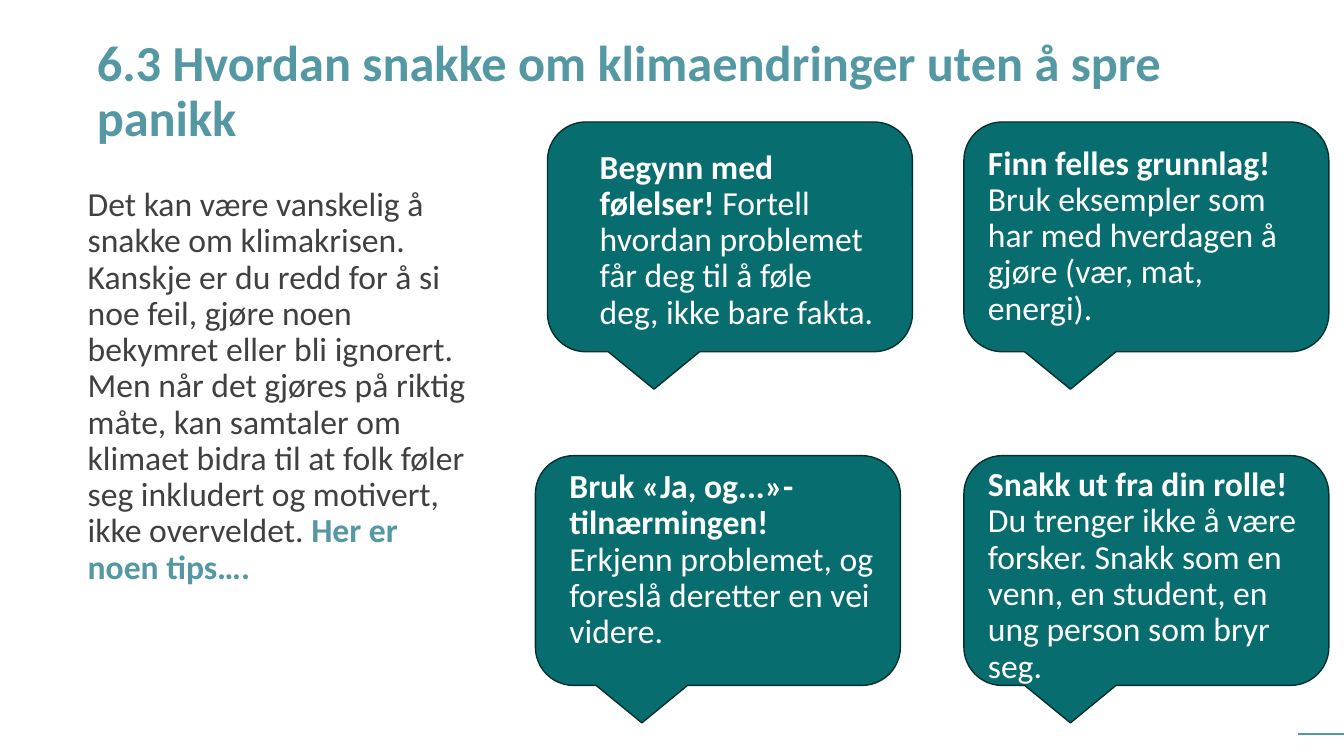
from dataclasses import dataclass

import pptx
import pptx.dml.color
import pptx.enum.shapes
import pptx.enum.text
import pptx.oxml
import pptx.oxml.ns
import pptx.util
from pptx.util import Inches


@dataclass(frozen=True)
class Theme:
    font: str = "Calibri"
    title_size: int = 36
    text_size: int = 24
    line_width: int = 1
    accent: str = "5398A2"
    body: str = "404040"
    bubble: str = "086D6E"
    bubble_line: str = "043030"
    bubble_text: str = "FFFFFF"


THEME = Theme()

TITLE = "6.3 Hvordan snakke om klimaendringer uten å spre panikk"
INTRO = (
    "Det kan være vanskelig å snakke om klimakrisen. Kanskje er du redd for å si "
    "noe feil, gjøre noen bekymret eller bli ignorert. Men når det gjøres på riktig "
    "måte, kan samtaler om klimaet bidra til at folk føler seg inkludert og motivert, "
    "ikke overveldet. "
)
INTRO_END = "Her er noen tips…."

BUBBLE_WIDTH, BUBBLE_HEIGHT = 3.62, 2.28
BUBBLE_ADJUSTMENTS = (-0.208, 0.663, 0.167)
TOP_ROW, BOTTOM_ROW = 1.21, 4.52
RIGHT_COLUMN = 9.56
TIP_HEIGHT = 2.68

TIPS = [
    ((5.43, TOP_ROW), (5.85, 1.44, 2.94), "Begynn med følelser! ",
     "Fortell hvordan problemet får deg til å føle deg, ikke bare fakta."),
    ((RIGHT_COLUMN, TOP_ROW), (9.7, 1.4, 3.28), "Finn felles grunnlag! ",
     "Bruk eksempler som har med hverdagen å gjøre (vær, mat, energi)."),
    ((5.31, BOTTOM_ROW), (5.55, 4.61, 3.24), "Bruk «Ja, og...»-tilnærmingen! ",
     "Erkjenn problemet, og foreslå deretter en vei videre."),
    ((RIGHT_COLUMN, BOTTOM_ROW), (9.7, 4.59, 3.5), "Snakk ut fra din rolle! ",
     "Du trenger ikke å være forsker. Snakk som en venn, en student, en ung person "
     "som bryr seg."),
]


def color(value):
    return pptx.dml.color.RGBColor.from_string(value)


def place(shape, left, top, width, height):
    shape.left, shape.top = Inches(left), Inches(top)
    shape.width, shape.height = Inches(width), Inches(height)


def write(shape, size, spans):
    frame = shape.text_frame
    frame.word_wrap = True
    frame.auto_size = pptx.enum.text.MSO_AUTO_SIZE.NONE
    frame.vertical_anchor = pptx.enum.text.MSO_ANCHOR.TOP
    para = frame.paragraphs[0]
    para.alignment = pptx.enum.text.PP_ALIGN.LEFT
    para.line_spacing = 0.9
    para.space_before = pptx.util.Pt(0)
    for text, tint, bold in spans:
        span = para.add_run()
        span.text = text
        span.font.name = THEME.font
        span.font.size = pptx.util.Pt(size)
        span.font.bold = bold
        span.font.color.rgb = color(tint)
    return para


def remove_bullet(para):
    properties = para._p.get_or_add_pPr()
    properties.set("marL", "0")
    properties.set("indent", "0")
    properties.append(pptx.oxml.parse_xml(
        f"<a:buNone {pptx.oxml.ns.nsdecls('a')}/>"))


def add_bubble(page, left, top):
    bubble = page.shapes.add_shape(
        pptx.enum.shapes.MSO_SHAPE.ROUNDED_RECTANGULAR_CALLOUT,
        Inches(left), Inches(top), Inches(BUBBLE_WIDTH), Inches(BUBBLE_HEIGHT))
    for index, value in enumerate(BUBBLE_ADJUSTMENTS):
        bubble.adjustments[index] = value
    bubble.shadow.inherit = False
    bubble.fill.solid()
    bubble.fill.fore_color.rgb = color(THEME.bubble)
    bubble.line.color.rgb = color(THEME.bubble_line)
    bubble.line.width = pptx.util.Pt(THEME.line_width)


def add_tip(page, left, top, width, heading, advice):
    box = page.shapes.add_textbox(
        Inches(left), Inches(top), Inches(width), Inches(TIP_HEIGHT))
    write(box, THEME.text_size, [(heading, THEME.bubble_text, True),
                                 (advice, THEME.bubble_text, False)])


def add_rule(page, left, right, top):
    rule = page.shapes.add_connector(
        pptx.enum.shapes.MSO_CONNECTOR.STRAIGHT,
        Inches(left), Inches(top), Inches(right), Inches(top))
    rule.line.color.rgb = color(THEME.accent)
    rule.line.width = pptx.util.Pt(THEME.line_width)
    rule._element.spPr.append(pptx.oxml.parse_xml(
        f"<a:effectLst {pptx.oxml.ns.nsdecls('a')}/>"))


def main():
    deck = pptx.Presentation()
    deck.slide_width, deck.slide_height = Inches(13.33), Inches(7.5)
    page = deck.slides.add_slide(deck.slide_layouts[1])

    title, intro = page.shapes.title, page.placeholders[1]
    place(title, 0.86, 0.33, 11.61, 0.88)
    write(title, THEME.title_size, [(TITLE, THEME.accent, True)])
    place(intro, 0.77, 1.81, 4.02, 4.74)
    remove_bullet(write(intro, THEME.text_size, [
        (INTRO, THEME.body, False), (INTRO_END, THEME.accent, True)]))

    add_rule(page, 12.87, 13.33, 7.28)
    for corner, *_ in TIPS:
        add_bubble(page, *corner)
    for _, area, heading, advice in TIPS:
        add_tip(page, *area, heading, advice)

    deck.save("out.pptx")


if __name__ == "__main__":
    main()
